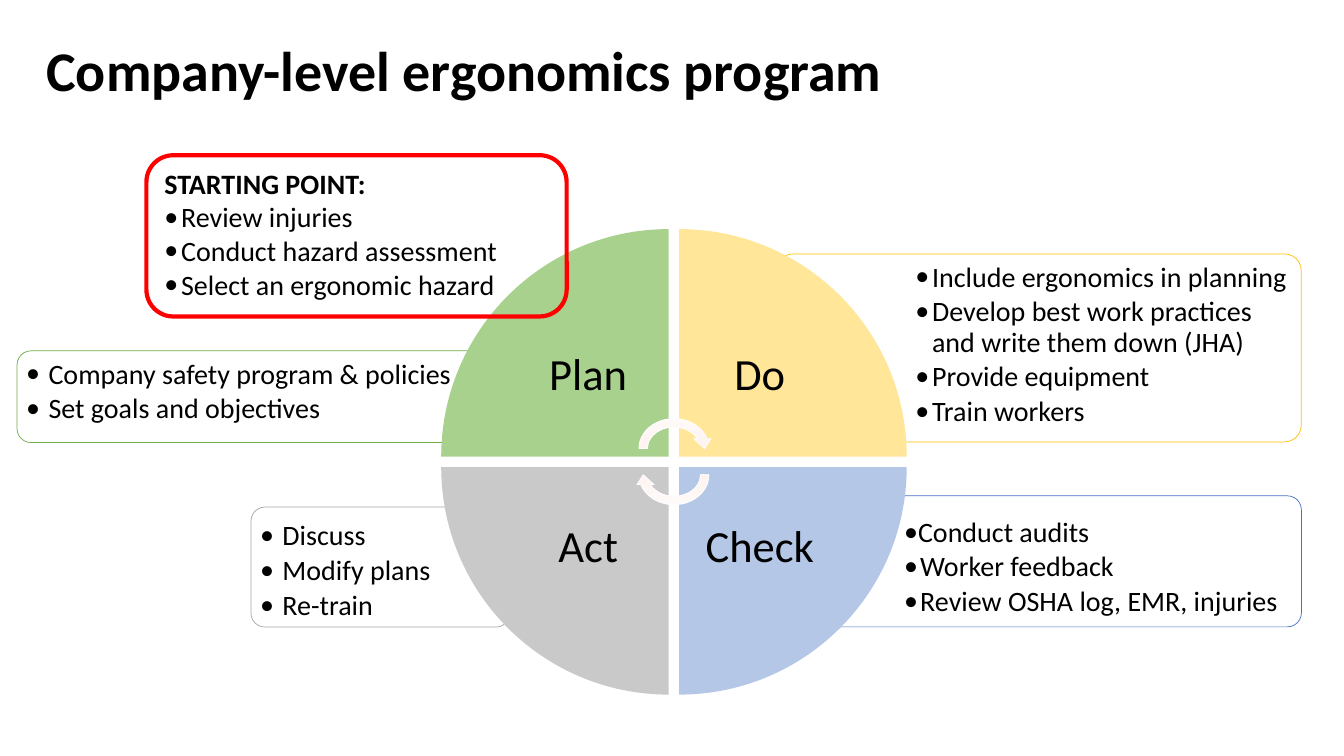
import math

import pptx
import pptx.dml.color
import pptx.enum.shapes
import pptx.enum.text
import pptx.util
from lxml import etree
from pptx.oxml.ns import qn

Pt = pptx.util.Pt
RGBColor = pptx.dml.color.RGBColor
SHAPE = pptx.enum.shapes.MSO_SHAPE
ALIGN = pptx.enum.text.PP_ALIGN
ANCHOR = pptx.enum.text.MSO_ANCHOR

BLACK = RGBColor(0x00, 0x00, 0x00)
WHITE = RGBColor(0xFF, 0xFF, 0xFF)
RED = RGBColor(0xFF, 0x00, 0x00)
GREEN = RGBColor(0x70, 0xAD, 0x47)
GOLD = RGBColor(0xFF, 0xC0, 0x00)
BLUE = RGBColor(0x44, 0x72, 0xC4)
GRAY = RGBColor(0xA5, 0xA5, 0xA5)
LIGHT_GREEN = RGBColor(0xA9, 0xD1, 0x8E)
LIGHT_GOLD = RGBColor(0xFF, 0xE6, 0x99)
LIGHT_BLUE = RGBColor(0xB4, 0xC7, 0xE7)
LIGHT_GRAY = RGBColor(0xC9, 0xC9, 0xC9)
PALE_PINK = RGBColor(0xFE, 0xFA, 0xF9)
PINK = RGBColor(0xFD, 0xEB, 0xE7)

FONT = "Calibri"

# Wheel geometry, in points
CENTER_X, CENTER_Y = 481.4, 329.9
RADIUS = 162.5
HALF_GAP = 3.75
# Handle length of the curve that draws a quarter circle
HANDLE = RADIUS * 4 / 3 * (math.sqrt(2) - 1)


def write(paragraph, text, size=20, bold=False, align=ALIGN.LEFT, spacing=0.9,
          after=0, bullet_indent=None):
    """Fill a paragraph; bullet_indent is the text offset after a bullet."""
    if bullet_indent is not None:
        properties = paragraph._p.get_or_add_pPr()
        properties.set("marL", str(Pt(bullet_indent)))
        properties.set("indent", str(-Pt(bullet_indent)))
        etree.SubElement(properties, qn("a:buFont"), typeface=FONT)
        etree.SubElement(properties, qn("a:buChar"), char="•")
    paragraph.alignment = align
    paragraph.line_spacing = spacing
    paragraph.space_before = Pt(0)
    paragraph.space_after = Pt(after)
    run = paragraph.add_run()
    run.text = text
    run.font.name = FONT
    run.font.size = Pt(size)
    run.font.bold = bold
    run.font.color.rgb = BLACK


class ErgonomicsSlide:
    def __init__(self, deck):
        self.slide = deck.slides.add_slide(deck.slide_layouts[5])
        self.shapes = self.slide.shapes

    def frame(self, shape, insets, anchor):
        frame = shape.text_frame
        frame.word_wrap = True
        frame.vertical_anchor = anchor
        (frame.margin_left, frame.margin_top,
         frame.margin_right, frame.margin_bottom) = map(Pt, insets)
        return frame

    def title(self, text, left, top, width, height):
        title = self.shapes.title
        title.left, title.top, title.width, title.height = map(
            Pt, (left, top, width, height))
        frame = self.frame(title, (7.2, 3.6, 7.2, 3.6), ANCHOR.MIDDLE)
        write(frame.paragraphs[0], text, size=40, bold=True)

    def callout(self, box, insets, color, bullets, indents, heading=None,
                anchor=ANCHOR.TOP, radius=10, line_width=0.5, fill=WHITE,
                spacing=0.9, after=3.2):
        callout = self.shapes.add_shape(SHAPE.ROUNDED_RECTANGLE, *map(Pt, box))
        callout.shadow.inherit = False
        callout.adjustments[0] = radius / box[3]
        if fill is None:
            callout.fill.background()
        else:
            callout.fill.solid()
            callout.fill.fore_color.rgb = fill
        callout.line.color.rgb = color
        callout.line.width = Pt(line_width)
        # The rounded corners already push the text inwards
        corner = radius * (1 - math.sqrt(0.5))
        frame = self.frame(callout, [inset - corner for inset in insets], anchor)
        entries = [(heading, None)] if heading else []
        entries += zip(bullets, indents)
        for index, (text, indent) in enumerate(entries):
            paragraph = frame.paragraphs[0] if index == 0 else frame.add_paragraph()
            write(paragraph, text, bold=indent is None, bullet_indent=indent,
                  spacing=spacing, after=after)

    def quadrant(self, label, side_x, side_y, color):
        """A quarter disc; the sides are -1 for left/top and 1 for right/bottom."""
        pivot_x = CENTER_X + side_x * HALF_GAP
        pivot_y = CENTER_Y + side_y * HALF_GAP
        builder = self.shapes.build_freeform(Pt(pivot_x), Pt(pivot_y))
        builder.add_line_segments(
            [(Pt(pivot_x + side_x * RADIUS), Pt(pivot_y)),
             (Pt(pivot_x), Pt(pivot_y + side_y * RADIUS))], close=True)
        quadrant = builder.convert_to_shape()
        # Bend the outer edge into a quarter circle
        side, rim = quadrant._element.findall(".//" + qn("a:lnTo"))
        start, end = side[0], rim[0]
        curve = etree.Element(qn("a:cubicBezTo"))
        for point, shift_x, shift_y in ((start, 0, side_y * HANDLE),
                                        (end, side_x * HANDLE, 0)):
            etree.SubElement(curve, qn("a:pt"),
                             x=str(int(point.get("x")) + Pt(shift_x)),
                             y=str(int(point.get("y")) + Pt(shift_y)))
        rim.getparent().replace(rim, curve)
        curve.append(end)

        quadrant.shadow.inherit = False
        quadrant.fill.solid()
        quadrant.fill.fore_color.rgb = color
        quadrant.line.fill.background()
        outer, inner = 62, 14.5
        left, right = (outer, inner) if side_x < 0 else (inner, outer)
        top, bottom = (outer, inner) if side_y < 0 else (inner, outer)
        frame = self.frame(quadrant, (left, top, right, bottom), ANCHOR.MIDDLE)
        write(frame.paragraphs[0], label, size=31.8, align=ALIGN.CENTER)

    def cycle_arrow(self, top, rotation):
        width, height = 56.2, 49
        arrow = self.shapes.add_shape(
            SHAPE.CIRCULAR_ARROW, Pt(CENTER_X - width / 2), Pt(top),
            Pt(width), Pt(height))
        arrow.rotation = rotation
        arrow.shadow.inherit = False
        arrow.fill.gradient()
        arrow.fill.gradient_angle = 270
        for stop, color in zip(arrow.fill.gradient_stops, (PALE_PINK, PINK)):
            stop.color.rgb = color
        arrow.line.color.rgb = WHITE
        arrow.line.width = Pt(0.5)


def main():
    deck = pptx.Presentation()
    deck.slide_width, deck.slide_height = Pt(960), Pt(540)
    program = ErgonomicsSlide(deck)
    program.title("Company-level ergonomics program", 25.9, 18, 738.7, 68.4)

    # Notes behind the wheel
    program.callout(
        (579.6, 354.2, 350, 93.6), (66.2, 35, 6.5, 6.5), BLUE,
        ["Conduct audits", "Worker feedback", "Review OSHA log, EMR, injuries"],
        [0, 11.5, 11.5], anchor=ANCHOR.BOTTOM)
    program.callout(
        (179.3, 362.2, 185, 85.7), (6.5, 10.5, 45, 6.5), GRAY,
        ["Discuss", "Modify plans", "Re-train"], [16] * 3)
    program.callout(
        (554.4, 181.4, 375.1, 134.3), (99.4, 6.5, 6.5, 31.7), GOLD,
        ["Include ergonomics in planning",
         "Develop best work practices and write them down (JHA)",
         "Provide equipment", "Train workers"], [12] * 4, radius=12)
    program.callout(
        (12.2, 250.6, 440.6, 65.5), (6.5, 6.5, 120, 31), GREEN,
        ["Company safety program & policies", "Set goals and objectives"],
        [16] * 2)

    # Plan-Do-Check-Act wheel
    for label, side_x, side_y, color in (
            ("Plan", -1, -1, LIGHT_GREEN), ("Do", 1, -1, LIGHT_GOLD),
            ("Check", 1, 1, LIGHT_BLUE), ("Act", -1, 1, LIGHT_GRAY)):
        program.quadrant(label, side_x, side_y, color)
    program.cycle_arrow(295.9, 0)
    program.cycle_arrow(314.6, 180)

    # Starting point
    program.callout(
        (104.6, 110.9, 300.2, 115.2), (12.8, 7.9, 7.2, 6), RED,
        ["Review injuries", "Conduct hazard assessment",
         "Select an ergonomic hazard"], [12] * 3, heading="STARTING POINT:",
        radius=19.2, line_width=3, fill=None, spacing=1.0, after=0)

    deck.save("out.pptx")


if __name__ == "__main__":
    main()
